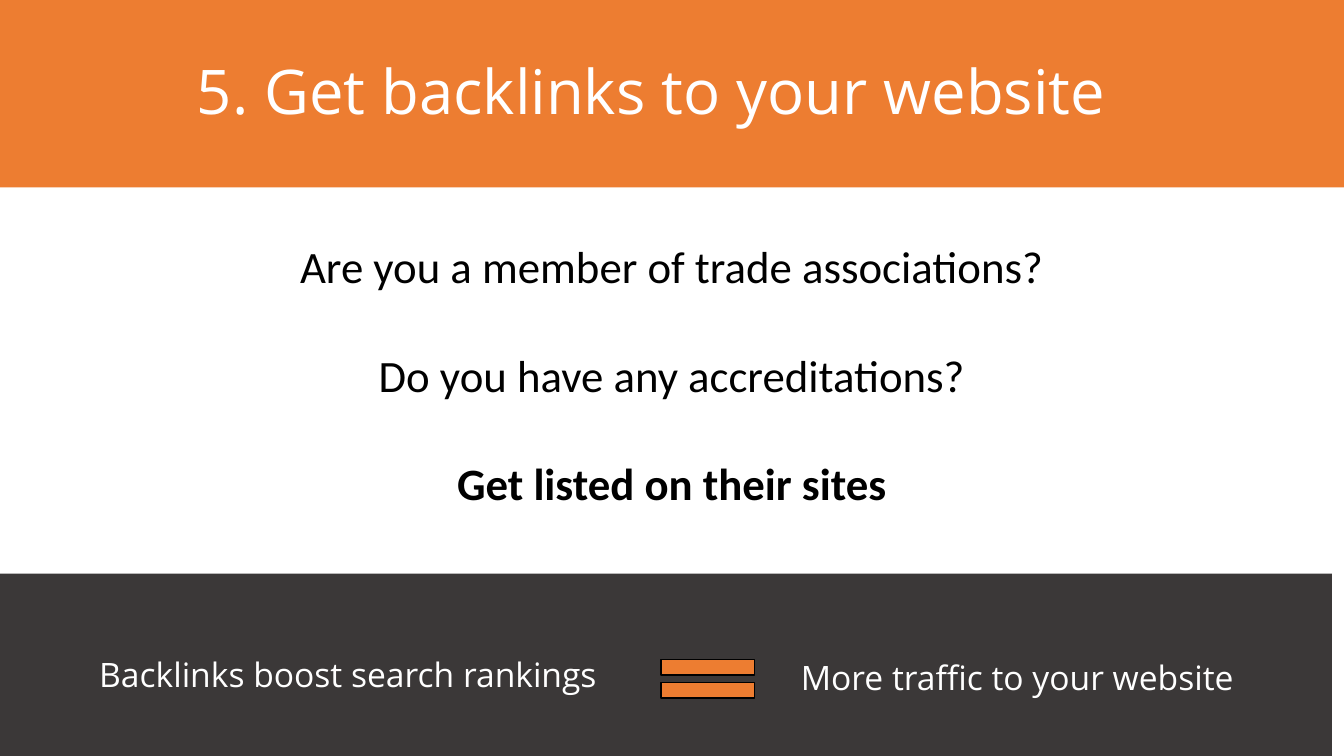
from pptx import Presentation
from pptx.dml.color import RGBColor
from pptx.enum.shapes import MSO_SHAPE
from pptx.enum.text import MSO_ANCHOR, MSO_AUTO_SIZE, PP_ALIGN
from pptx.oxml.ns import qn
from pptx.util import Inches, Pt

TITLE = "5. Get backlinks to your website"
QUESTIONS = [
    ("Are you a member of trade associations?", False),
    ("Do you have any accreditations?", False),
    ("Get listed on their sites", True),
]
FOOTER = [
    ("Backlinks boost search rankings ", (0.73, 6.44, 5.53, 0.81)),
    ("More traffic to your website", (7.36, 6.47, 5.46, 0.81)),
]
BANDS = [
    ("3B3838", (0, 5.69, 13.21, 1.83)),
    ("ED7D31", (0, 0, 13.33, 1.86)),
]
TITLE_AREA = (0.26, 0.35, 12.41, 1.18)
QUESTION_AREA = (2.15, 2.32, 9.03, 3.87)
EQUALS_AREA = (6.39, 6.41, 1.26, 0.65)
QUESTION_GAP = 39


def color(value):
    return RGBColor.from_string(value)


def place(shape, area):
    shape.left, shape.top, shape.width, shape.height = map(Inches, area)


def add_filled(slide, kind, area, fill):
    shape = slide.shapes.add_shape(kind, *map(Inches, area))
    shape.shadow.inherit = False
    shape.fill.solid()
    shape.fill.fore_color.rgb = color(fill)
    shape.line.fill.background()
    return shape


def write(paragraph, text, font, size, fill, bold=False):
    paragraph.alignment = PP_ALIGN.CENTER
    run = paragraph.add_run()
    run.text = text
    run.font.name = font
    run.font.size = Pt(size)
    run.font.bold = bold
    run.font.color.rgb = color(fill)


def add_bands(slide):
    tree = slide.shapes.title.element.getparent()
    for position, (fill, area) in enumerate(BANDS):
        band = add_filled(slide, MSO_SHAPE.RECTANGLE, area, fill)
        tree.insert(2 + position, band.element)


def fill_title(title):
    place(title, TITLE_AREA)
    frame = title.text_frame
    frame.auto_size = MSO_AUTO_SIZE.NONE
    frame.vertical_anchor = MSO_ANCHOR.MIDDLE
    paragraph = frame.paragraphs[0]
    paragraph.line_spacing = 0.9
    write(paragraph, TITLE, "Open Sans", 44, "FFFFFF")


def fill_questions(body):
    place(body, QUESTION_AREA)
    frame = body.text_frame
    frame.auto_size = MSO_AUTO_SIZE.NONE
    for index, (text, bold) in enumerate(QUESTIONS):
        paragraph = frame.add_paragraph() if index else frame.paragraphs[0]
        properties = paragraph._p.get_or_add_pPr()
        properties.set("marL", "0")
        properties.set("indent", "0")
        properties.append(properties.makeelement(qn("a:buNone"), {}))
        paragraph.space_before = Pt(QUESTION_GAP if index else 0)
        write(paragraph, text, "Calibri", 32, "000000", bold)


def add_footer(slide):
    for text, area in FOOTER:
        frame = slide.shapes.add_textbox(*map(Inches, area)).text_frame
        frame.word_wrap = True
        write(frame.paragraphs[0], text, "Open Sans", 24, "FFFFFF")
    equals = add_filled(slide, MSO_SHAPE.MATH_EQUAL, EQUALS_AREA, "ED7D31")
    equals.line.color.rgb = color("000000")
    equals.line.width = Pt(1)


def main():
    presentation = Presentation()
    presentation.slide_width = Inches(13.33)
    presentation.slide_height = Inches(7.5)
    slide = presentation.slides.add_slide(presentation.slide_layouts[1])
    add_bands(slide)
    fill_title(slide.shapes.title)
    fill_questions(slide.placeholders[1])
    add_footer(slide)
    presentation.save("out.pptx")


if __name__ == "__main__":
    main()
